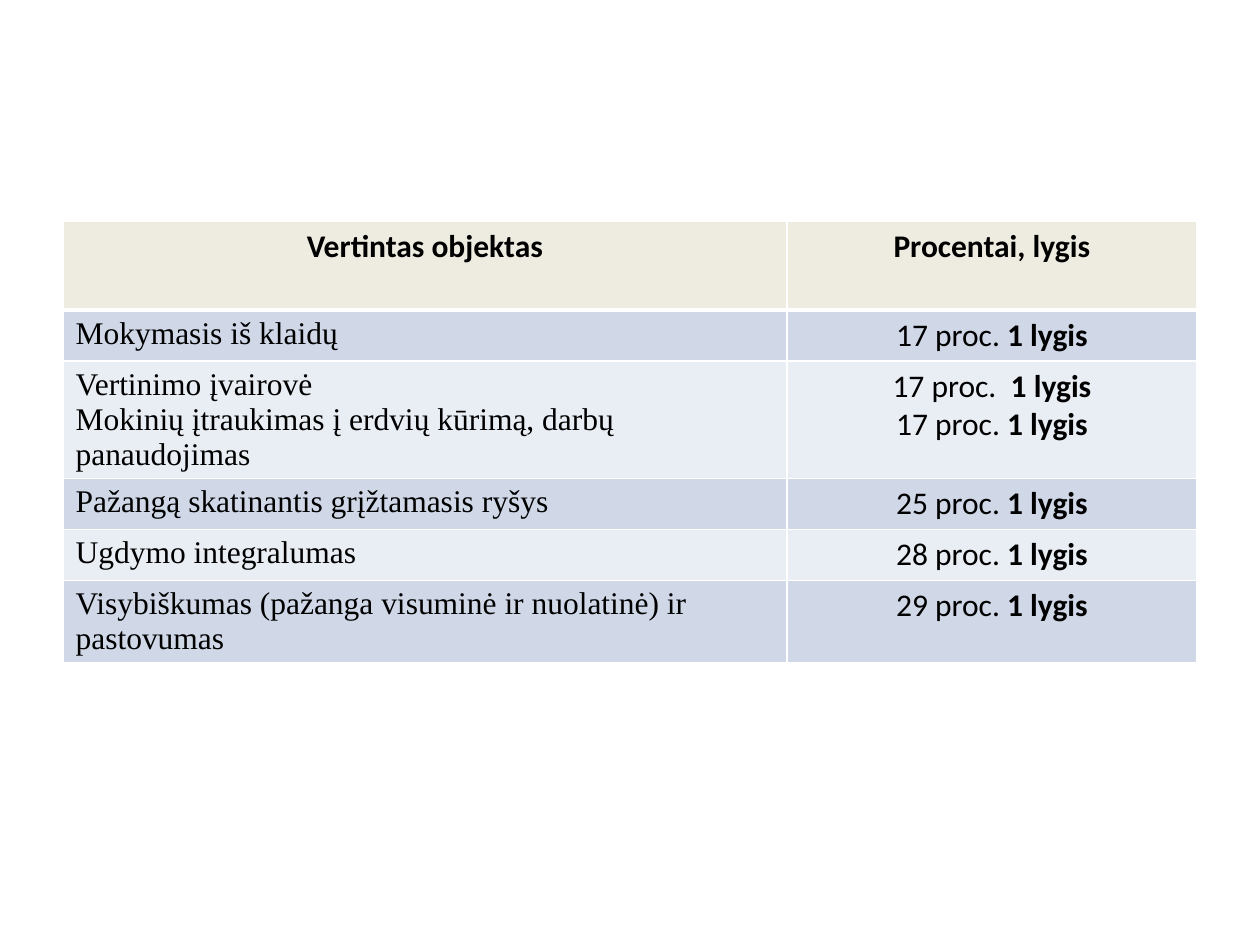
from lxml.etree import SubElement
from pptx import Presentation
from pptx.dml.color import RGBColor
from pptx.enum.text import PP_ALIGN
from pptx.oxml.ns import qn
from pptx.util import Emu, Pt

PX = 914400 // 126
COLORS = {
    "header": "EEECE1",
    "odd": "D0D8E8",
    "even": "E9EDF4",
    "border": "FFFFFF",
    "text": "000000",
}
COLUMN_WIDTHS = (724, 410)
ROW_HEIGHTS = (89, 51, 117, 51, 51, 82)
HEADERS = ("Vertintas objektas", "Procentai, lygis")
LEVEL = "1 lygis"
RESULTS = [
    (["Mokymasis iš klaidų"], ["17 proc. "]),
    (["Vertinimo įvairovė",
      "Mokinių įtraukimas į erdvių kūrimą, darbų panaudojimas"],
     ["17 proc.  ", "17 proc. "]),
    (["Pažangą skatinantis grįžtamasis ryšys"], ["25 proc. "]),
    (["Ugdymo integralumas"], ["28 proc. "]),
    (["Visybiškumas (pažanga visuminė ir nuolatinė) ir pastovumas"], ["29 proc. "]),
]


def px(length):
    return Emu(length * PX)


def write_cell(cell, paragraphs, font_name, align):
    """Fill a cell with paragraphs, each a list of (text, bold) spans."""
    frame = cell.text_frame
    for index, spans in enumerate(paragraphs):
        para = frame.add_paragraph() if index else frame.paragraphs[0]
        para.alignment = align
        for text, bold in spans:
            span = para.add_run()
            span.text = text
            span.font.color.rgb = RGBColor.from_string(COLORS["text"])
            formats = {"name": font_name, "size": Pt(18), "bold": bold}
            for name, value in formats.items():
                setattr(span.font, name, value)


def paint_cell(cell, fill, top=1, bottom=1):
    """Set the fill and the border widths in points."""
    properties = cell._tc.get_or_add_tcPr()
    for side, width in {"L": 1, "R": 1, "T": top, "B": bottom}.items():
        line = SubElement(properties, qn(f"a:ln{side}"), w=str(Pt(width)))
        color = SubElement(line, qn("a:solidFill"))
        SubElement(color, qn("a:srgbClr"), val=COLORS["border"])
    cell.fill.solid()
    cell.fill.fore_color.rgb = RGBColor.from_string(COLORS[fill])


def add_results_table(page):
    table = page.shapes.add_table(
        len(ROW_HEIGHTS), len(COLUMN_WIDTHS), px(63), px(221),
        px(sum(COLUMN_WIDTHS)), px(sum(ROW_HEIGHTS))).table
    for column, width in zip(table.columns, COLUMN_WIDTHS):
        column.width = px(width)
    for row, height in zip(table.rows, ROW_HEIGHTS):
        row.height = px(height)

    for index, header in enumerate(HEADERS):
        cell = table.cell(0, index)
        write_cell(cell, [[(header, True)]], "Calibri", PP_ALIGN.CENTER)
        paint_cell(cell, "header", bottom=3)

    for index, (subjects, percents) in enumerate(RESULTS, start=1):
        subject_cell, level_cell = table.rows[index].cells
        write_cell(subject_cell, [[(subject, False)] for subject in subjects],
                   "Times New Roman", PP_ALIGN.LEFT)
        write_cell(level_cell,
                   [[(percent, False), (LEVEL, True)] for percent in percents],
                   "Calibri", PP_ALIGN.CENTER)
        for cell in (subject_cell, level_cell):
            paint_cell(cell, "odd" if index % 2 else "even", top=3 if index == 1 else 1)


def main():
    deck = Presentation()
    deck.slide_width, deck.slide_height = px(1260), px(945)
    page = deck.slides.add_slide(deck.slide_layouts[6])
    add_results_table(page)
    deck.save("out.pptx")


if __name__ == "__main__":
    main()
